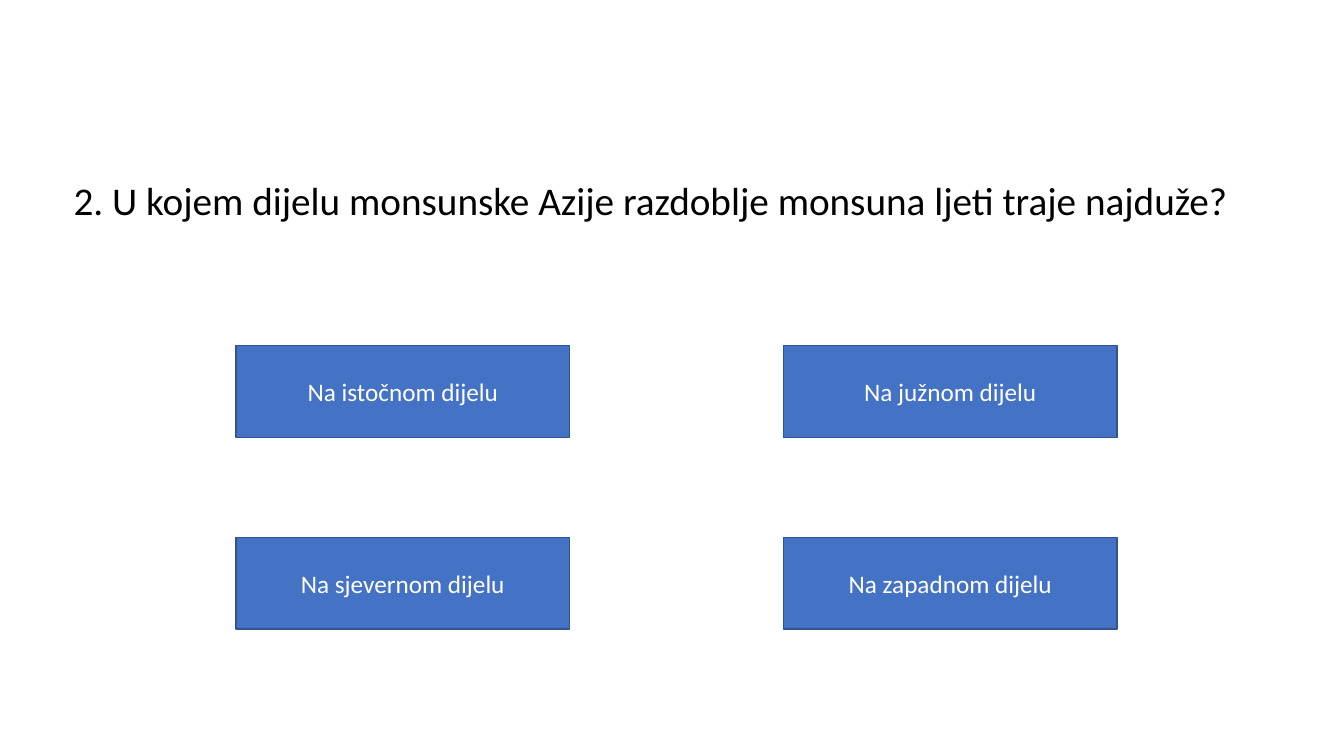
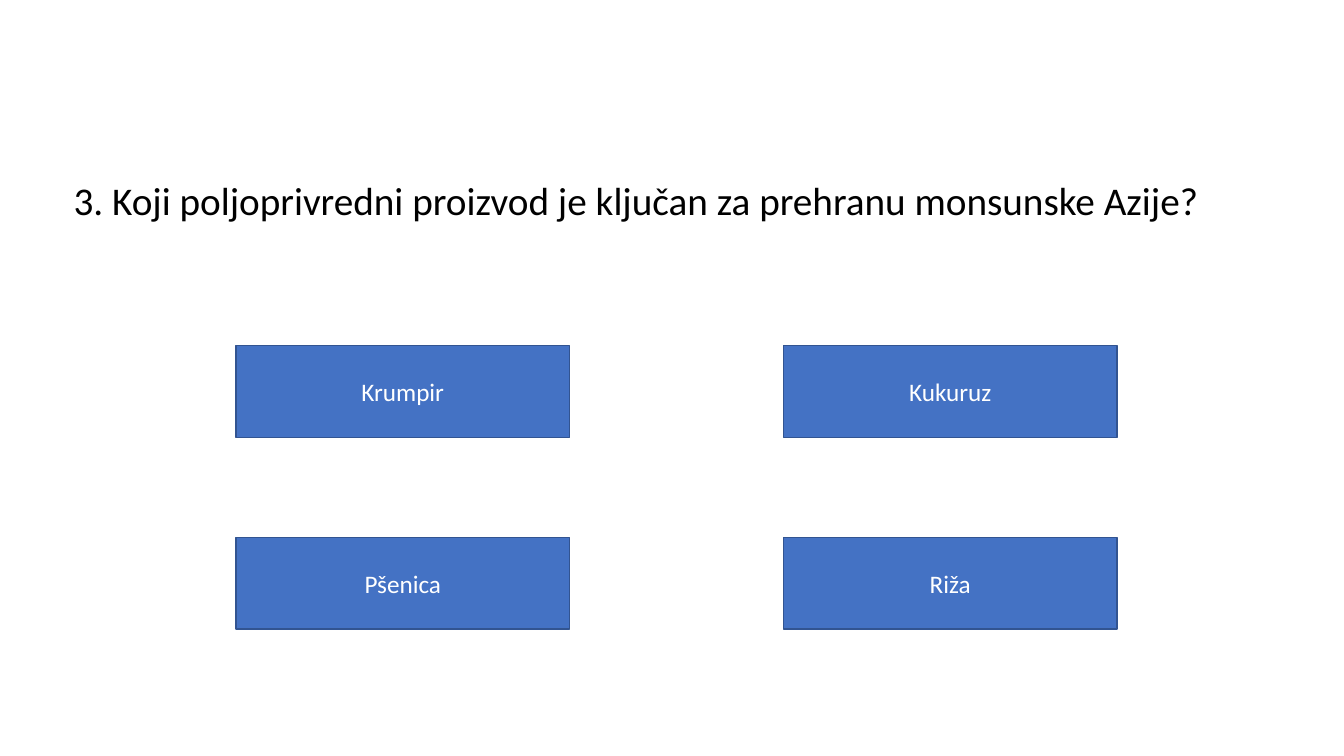
"""Build two quiz slides, each with a question and a grid of four answers."""
from dataclasses import dataclass

from pptx import Presentation
from pptx.dml.color import RGBColor as RGB
from pptx.enum.shapes import MSO_SHAPE as SHAPE
from pptx.enum.text import MSO_ANCHOR as ANCHOR, MSO_AUTO_SIZE as AUTO, PP_ALIGN as ALIGN
from pptx.presentation import Presentation as Deck
from pptx.slide import Slide
from pptx.text.text import TextFrame
from pptx.util import Inches, Pt

COLORS = {"question": "000000", "answer": "FFFFFF", "fill": "4472C4", "line": "325491"}
FONT = "Calibri"
TITLE_ONLY = 5
COLUMNS = 2
LEFT, TOP = 2.34, 3.43
WIDTH, HEIGHT = 3.31, 0.91
STEP_X, STEP_Y = 5.43, 1.9


@dataclass(frozen=True)
class Quiz:
    question: str
    answers: tuple[str, ...]


QUIZZES = (
    Quiz("2. U kojem dijelu monsunske Azije razdoblje monsuna ljeti traje najduže?",
         ("Na istočnom dijelu", "Na južnom dijelu",
          "Na sjevernom dijelu", "Na zapadnom dijelu")),
    Quiz("3. Koji poljoprivredni proizvod je ključan za prehranu monsunske Azije?",
         ("Krumpir", "Kukuruz", "Pšenica", "Riža")),
)


def write(tf: TextFrame, text: str, *, size: int, color: str,
          align: ALIGN, anchor: ANCHOR) -> None:
    tf.word_wrap = True
    tf.vertical_anchor = anchor
    p = tf.paragraphs[0]
    p.alignment = align
    r = p.add_run()
    r.text = text
    r.font.name = FONT
    r.font.size = Pt(size)
    r.font.color.rgb = RGB.from_string(COLORS[color])


def add_question(s: Slide, text: str) -> None:
    title = s.shapes.title
    title.left, title.top = Inches(0.63), Inches(1.7)
    title.width, title.height = Inches(11.81), Inches(0.57)
    write(title.text_frame, text, size=28, color="question",
          align=ALIGN.LEFT, anchor=ANCHOR.TOP)
    title.text_frame.auto_size = AUTO.SHAPE_TO_FIT_TEXT


def add_answer(s: Slide, index: int, text: str) -> None:
    row, column = divmod(index, COLUMNS)
    sp = s.shapes.add_shape(
        SHAPE.RECTANGLE, Inches(LEFT + column * STEP_X), Inches(TOP + row * STEP_Y),
        Inches(WIDTH), Inches(HEIGHT))
    sp.shadow.inherit = False
    sp.fill.solid()
    sp.fill.fore_color.rgb = RGB.from_string(COLORS["fill"])
    sp.line.color.rgb = RGB.from_string(COLORS["line"])
    sp.line.width = Pt(1)
    write(sp.text_frame, text, size=18, color="answer",
          align=ALIGN.CENTER, anchor=ANCHOR.MIDDLE)


def add_quiz(prs: Deck, quiz: Quiz) -> None:
    s = prs.slides.add_slide(prs.slide_layouts[TITLE_ONLY])
    add_question(s, quiz.question)
    for index, answer in enumerate(quiz.answers):
        add_answer(s, index, answer)


def main() -> None:
    prs = Presentation()
    prs.slide_width, prs.slide_height = Inches(13.33), Inches(7.5)
    for quiz in QUIZZES:
        add_quiz(prs, quiz)
    prs.save("out.pptx")


if __name__ == "__main__":
    main()
